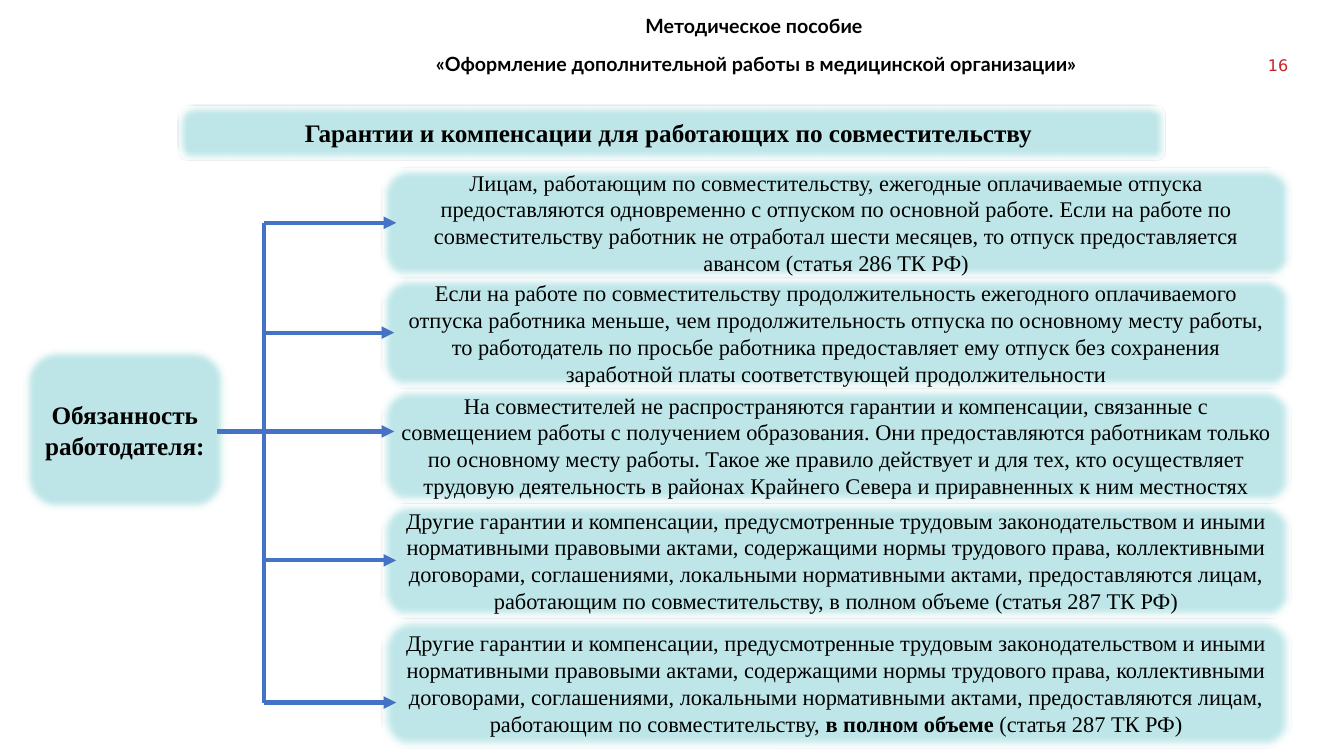
from dataclasses import dataclass

from lxml import etree
from pptx import Presentation
from pptx.dml.color import RGBColor
from pptx.enum.shapes import MSO_CONNECTOR, MSO_SHAPE
from pptx.enum.text import MSO_ANCHOR, MSO_AUTO_SIZE, PP_ALIGN
from pptx.oxml.ns import qn
from pptx.util import Inches, Pt

ROUNDED = MSO_SHAPE.ROUNDED_RECTANGLE
STRAIGHT = MSO_CONNECTOR.STRAIGHT
MIDDLE = MSO_ANCHOR.MIDDLE
GROW = MSO_AUTO_SIZE.SHAPE_TO_FIT_TEXT
CENTER, RIGHT = PP_ALIGN.CENTER, PP_ALIGN.RIGHT


@dataclass(frozen=True)
class Theme:
    fill: str = "BEE6E8"
    outline: str = "1E3256"
    arrow: str = "4472C4"
    text: str = "000000"
    number: str = "CA2324"
    header_font: str = "Lato"
    number_font: str = "DejaVu Sans"
    body_font: str = "Times New Roman"
    header_size: float = 14
    number_size: float = 11.4
    title_size: float = 18
    body_size: float = 16
    outline_width: float = 1
    arrow_width: float = 3
    soft_edge: float = 5


class SlideBuilder:
    """Places elements on a slide; lengths are percentages of its size."""

    def __init__(self, prs, theme):
        self.prs, self.theme = prs, theme
        self.s = prs.slides.add_slide(prs.slide_layouts[6])

    def x(self, share):
        return round(self.prs.slide_width * share / 100)

    def y(self, share):
        return round(self.prs.slide_height * share / 100)

    def area(self, left, top, width, height):
        return self.x(left), self.y(top), self.x(width), self.y(height)

    def paragraph(self, p, runs, align, font, size, color, bold=None):
        for text, run_bold in runs:
            r = p.add_run()
            r.text = text
            if bold is None:
                r.font.bold = run_bold
        p.alignment = align
        p.font.name, p.font.size = font, Pt(size)
        p.font.color.rgb = RGBColor.from_string(color)
        if bold is not None:
            p.font.bold = bold

    def header(self, area, lines):
        t = self.theme
        tf = self.s.shapes.add_textbox(*self.area(*area)).text_frame
        tf.word_wrap, tf.auto_size = True, GROW
        for i, line in enumerate(lines):
            p = tf.add_paragraph() if i else tf.paragraphs[0]
            self.paragraph(p, [(line, True)], CENTER, t.header_font,
                           t.header_size, t.text, True)
            p.space_after = Pt(10)

    def page_number(self, area, number):
        t = self.theme
        tf = self.s.shapes.add_textbox(*self.area(*area)).text_frame
        tf.word_wrap = True
        tf.margin_left = tf.margin_top = tf.margin_right = tf.margin_bottom = 0
        self.paragraph(tf.paragraphs[0], [(number, False)], RIGHT,
                       t.number_font, t.number_size, t.number, False)

    def box(self, area, runs, size, bold=None):
        t = self.theme
        sp = self.s.shapes.add_shape(ROUNDED, *self.area(*area))
        sp.fill.solid()
        sp.fill.fore_color.rgb = RGBColor.from_string(t.fill)
        sp.line.color.rgb = RGBColor.from_string(t.outline)
        sp.line.width = Pt(t.outline_width)
        # Blurred edge in place of the default shadow
        sp.shadow.inherit = False
        effects = sp.element.spPr.find(qn("a:effectLst"))
        etree.SubElement(effects, qn("a:softEdge"), rad=str(Pt(t.soft_edge)))
        tf = sp.text_frame
        tf.word_wrap, tf.vertical_anchor = True, MIDDLE
        self.paragraph(tf.paragraphs[0], runs, CENTER, t.body_font, size,
                       t.text, bold)

    def line(self, x1, y1, x2, y2, arrow=False):
        cx = self.s.shapes.add_connector(STRAIGHT, self.x(x1), self.y(y1),
                                         self.x(x2), self.y(y2))
        cx.line.color.rgb = RGBColor.from_string(self.theme.arrow)
        cx.line.width = Pt(self.theme.arrow_width)
        if arrow:
            ln = cx.line._get_or_add_ln()
            etree.SubElement(ln, qn("a:tailEnd"), type="triangle")
        etree.SubElement(cx.element.spPr, qn("a:effectLst"))


OTHER_GUARANTEES = (
    "Другие гарантии и компенсации, предусмотренные трудовым законодательством "
    "и иными нормативными правовыми актами, содержащими нормы трудового права, "
    "коллективными договорами, соглашениями, локальными нормативными актами, "
    "предоставляются лицам, работающим по совместительству, ")
IN_FULL, ARTICLE_287 = "в полном объеме ", "(статья 287 ТК РФ)"

# Box height, arrow height on the slide, arrow tip, runs
GUARANTEES = [
    (14.6, 29.47, 29.48, [(
        "Лицам, работающим по совместительству, ежегодные оплачиваемые отпуска "
        "предоставляются одновременно с отпуском по основной работе. Если на "
        "работе по совместительству работник не отработал шести месяцев, то "
        "отпуск предоставляется авансом (статья 286 ТК РФ)", False)]),
    (14.6, 44, 29.33, [(
        "Если на работе по совместительству продолжительность ежегодного "
        "оплачиваемого отпуска работника меньше, чем продолжительность отпуска "
        "по основному месту работы, то работодатель по просьбе работника "
        "предоставляет ему отпуск без сохранения заработной платы "
        "соответствующей продолжительности", False)]),
    (15.2, 57.07, 29.33, [(
        "На совместителей не распространяются гарантии и компенсации, связанные "
        "с совмещением работы с получением образования. Они предоставляются "
        "работникам только по основному месту работы. Такое же правило "
        "действует и для тех, кто осуществляет трудовую деятельность в районах "
        "Крайнего Севера и приравненных к ним местностях", False)]),
    (15.2, 74.13, 29.48, [(OTHER_GUARANTEES + IN_FULL + ARTICLE_287, False)]),
    (17.2, 92.93, 29.48, [(OTHER_GUARANTEES, False), (IN_FULL, True),
                          (ARTICLE_287, False)]),
]
LIST_LEFT, LIST_TOP, LIST_WIDTH = 28.35, 22.13, 67.72
STUB_X, TRUNK_X = 16.13, 19.65


def main():
    prs = Presentation()
    prs.slide_width, prs.slide_height = Inches(13.33), Inches(7.5)
    theme = Theme()
    b = SlideBuilder(prs, theme)

    # Page header
    b.page_number((93.53, 7.33, 2.32, 3.2), "16")
    b.header((23.17, 1.2, 66.22, 9.47), [
        "Методическое пособие ",
        "«Оформление дополнительной работы в медицинской организации»"])

    # Title and the employer's duty
    b.box((13.27, 13.87, 73.42, 7.33),
          [("Гарантии и компенсации для работающих по совместительству ", True)],
          theme.title_size, True)
    b.box((1.72, 46.13, 15.15, 21.47), [("Обязанность работодателя:", True)],
          theme.title_size, True)

    # Stacked guarantees
    top = LIST_TOP
    for height, _, _, runs in GUARANTEES:
        bold = None if len(runs) > 1 else False
        b.box((LIST_LEFT, top, LIST_WIDTH, height), runs, theme.body_size, bold)
        top += height

    # Stub, trunk and branches
    levels = [level for _, level, _, _ in GUARANTEES]
    b.line(STUB_X, levels[2], TRUNK_X, levels[2])
    b.line(TRUNK_X, levels[0], TRUNK_X, levels[-1])
    for _, level, tip, _ in GUARANTEES:
        b.line(TRUNK_X, level, tip, level, arrow=True)

    prs.save("out.pptx")


if __name__ == "__main__":
    main()
